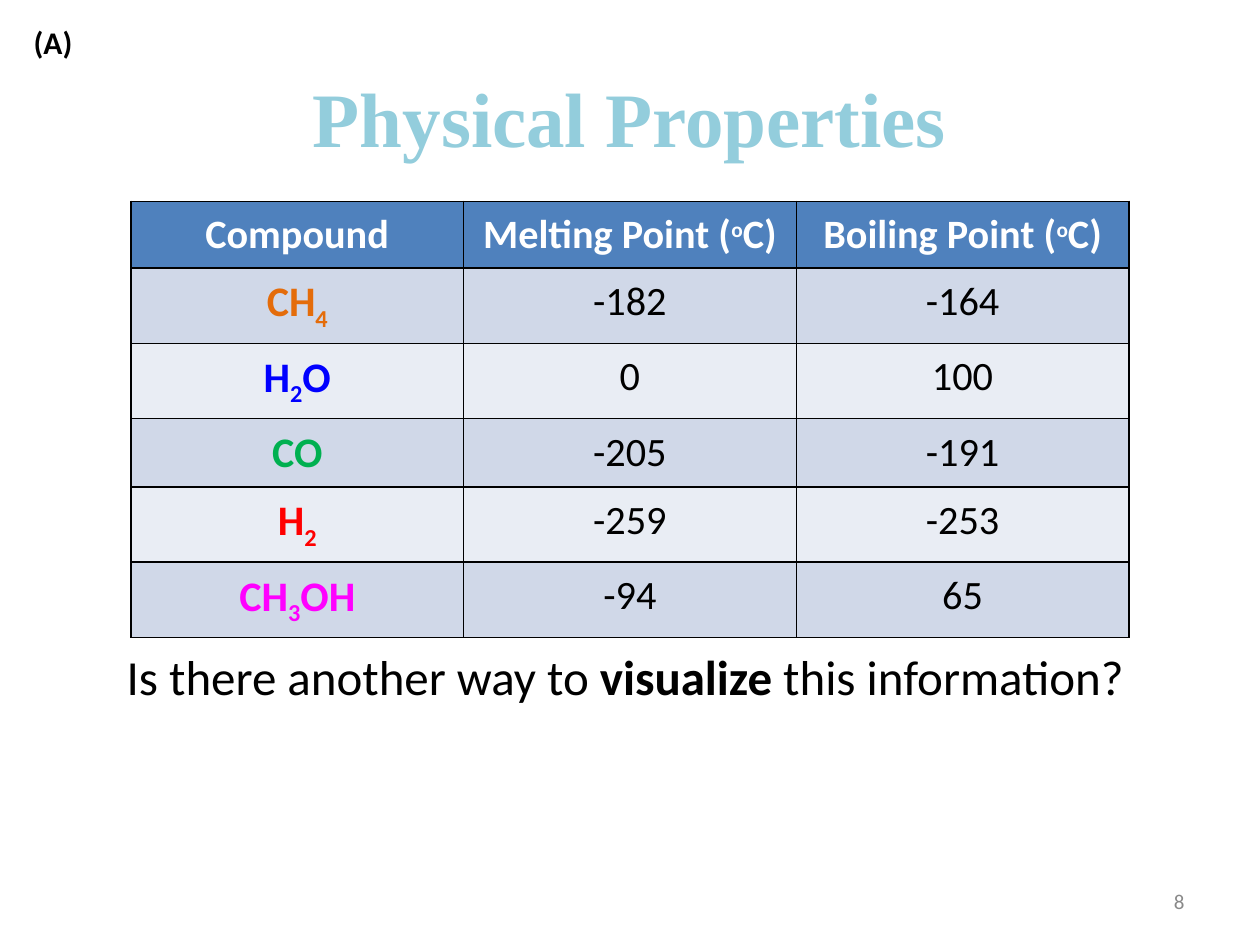
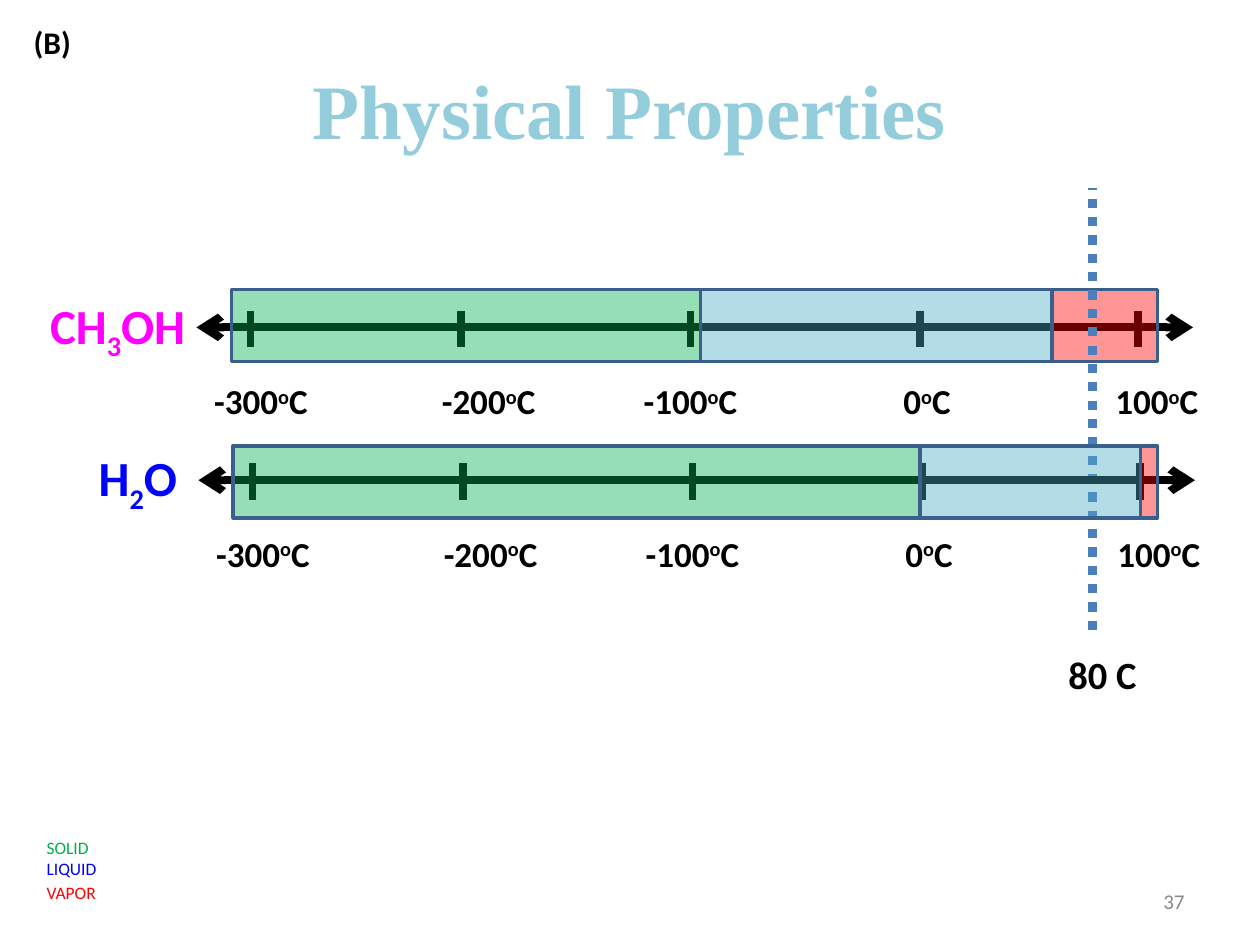
from pptx import Presentation
from pptx.dml.color import RGBColor
from pptx.enum.dml import MSO_LINE
from pptx.enum.shapes import MSO_CONNECTOR, MSO_SHAPE
from pptx.enum.text import MSO_ANCHOR, PP_ALIGN
from pptx.oxml.ns import qn
from pptx.util import Cm, Pt
from lxml.etree import SubElement

BLACK = RGBColor(0x00, 0x00, 0x00)
WHITE = RGBColor(0xFF, 0xFF, 0xFF)
GREY = RGBColor(0x89, 0x89, 0x89)
TITLE_BLUE = RGBColor(0x93, 0xCD, 0xDC)
HEADER_BLUE = RGBColor(0x4F, 0x81, 0xBD)
DARK_BAND = RGBColor(0xD0, 0xD8, 0xE8)
LIGHT_BAND = RGBColor(0xE9, 0xED, 0xF4)
ORANGE = RGBColor(0xE4, 0x6C, 0x0A)
BLUE = RGBColor(0x00, 0x00, 0xFF)
GREEN = RGBColor(0x00, 0xB0, 0x50)
RED = RGBColor(0xFF, 0x00, 0x00)
MAGENTA = RGBColor(0xFF, 0x00, 0xFF)
TEAL = RGBColor(0x4B, 0xAC, 0xC6)
BAR_EDGE = RGBColor(0x3A, 0x5F, 0x8C)
MARKER_BLUE = RGBColor(0x4B, 0x7E, 0xBC)

LEFT, CENTER, RIGHT = PP_ALIGN.LEFT, PP_ALIGN.CENTER, PP_ALIGN.RIGHT
TOP, MIDDLE = MSO_ANCHOR.TOP, MSO_ANCHOR.MIDDLE
BASELINES = {"^": "30000", "_": "-25000"}


def write(para, text, size, color, bold=False, align=LEFT, font="Calibri", raised_size=None):
    """Add text run by run; | parts runs, and a leading ^, _ or * raises, lowers or bolds one."""
    para.alignment = align
    for piece in text.split("|"):
        mark = piece[0] if piece[0] in "^_*" else ""
        span = para.add_run()
        span.text = piece[len(mark):]
        span.font.name = font
        span.font.size = Pt(raised_size if raised_size and mark == "^" else size)
        span.font.bold = bold or mark == "*"
        span.font.color.rgb = color
        if mark in BASELINES:
            span.font._element.set("baseline", BASELINES[mark])


def add_text(page, place, text, size, color, anchor=TOP, **style):
    box = page.shapes.add_textbox(*map(Cm, place))
    frame = box.text_frame
    frame.word_wrap = True
    frame.vertical_anchor = anchor
    write(frame.paragraphs[0], text, size, color, **style)
    return frame


deck = Presentation()
deck.slide_width, deck.slide_height = Cm(25.4), Cm(19.05)

# Title, panel letter and page number on both slides
pages = []
for letter, number, title_top in [("(A)", "8", 0.76), ("(B)", "37", 0.61)]:
    page = deck.slides.add_slide(deck.slide_layouts[6])
    add_text(page, (1.27, title_top, 22.86, 3.18), "Physical Properties", 44, TITLE_BLUE,
             MIDDLE, bold=True, align=CENTER, font="Times New Roman")
    add_text(page, (0.43, 0.33, 1.47, 1.02), letter, 18, BLACK, bold=True)
    add_text(page, (18.21, 17.65, 5.92, 1.02), number, 12, GREY, MIDDLE, align=RIGHT)
    pages.append(page)
table_page, scale_page = pages

# Table of melting and boiling points
HEADERS = ["Compound", "Melting Point (|^o|C)", "Boiling Point (|^o|C)"]
COMPOUNDS = [
    ("CH|_4", ORANGE, "-182", "-164"),
    ("H|_2|O", BLUE, "0", "100"),
    ("CO", GREEN, "-205", "-191"),
    ("H|_2", RED, "-259", "-253"),
    ("CH|_3|OH", MAGENTA, "-94", "65"),
]
rows = [[(header, 23, WHITE, True) for header in HEADERS]]
for formula, color, melting, boiling in COMPOUNDS:
    rows.append([(formula, 24, color, True), (melting, 23, BLACK, False),
                 (boiling, 23, BLACK, False)])

table = table_page.shapes.add_table(len(rows), 3, Cm(2.64), Cm(4.06), Cm(20.12), Cm(8.08)).table
for row_index, row in enumerate(rows):
    band = HEADER_BLUE if row_index == 0 else DARK_BAND if row_index % 2 else LIGHT_BAND
    for column_index, (text, size, color, bold) in enumerate(row):
        cell = table.cell(row_index, column_index)
        cell.margin_left = cell.margin_right = Cm(0.33)
        cell.margin_top = cell.margin_bottom = Cm(0.18)
        write(cell.text_frame.paragraphs[0], text, size, color, bold, CENTER, raised_size=21)
        properties = cell._tc.get_or_add_tcPr()
        for side in ("a:lnL", "a:lnR", "a:lnT", "a:lnB"):
            border = SubElement(properties, qn(side), w=str(Pt(1)))
            SubElement(SubElement(border, qn("a:solidFill")), qn("a:srgbClr"), val=str(BLACK))
        cell.fill.solid()
        cell.fill.fore_color.rgb = band

add_text(table_page, (1.17, 12.9, 23.09, 1.45),
         "Is there another way to |*visualize| this information? ", 28, BLACK, align=CENTER)

# Temperature scales: tick position and label position for each temperature
TICKS = [("-300", 5.05, 3.61), ("-200", 9.3, 8.2), ("-100", 13.92, 12.27),
         ("0", 18.54, 17.04), ("100", 22.94, 21.67)]
MARKER = (22.02, 12.7, 22.02, 3.78, MARKER_BLUE, 5.25, "dotted")
# name, colour, name corner, axis shift, axis height, bar top, bar edges, lines below the axis
SCALES = [
    ("CH|_3|OH", MAGENTA, (0.48, 5.84), 0, 6.6, 5.84, (4.67, 14.12, 21.21, 23.34), []),
    ("H|_2|O", BLUE, (0.89, 8.92), 0.04, 9.68, 8.99, (4.7, 18.55, 22.99, 23.34), [MARKER]),
]
for name, color, corner, shift, axis, bar_top, edges, lines_below in SCALES:
    lines = lines_below + [(3.96 + shift, axis, 24.05 + shift, axis, BLACK, 4.5, "arrows")]
    for _, tick, _ in TICKS:
        lines.append((tick + shift, axis - 0.34, tick + shift, axis + 0.39, BLACK, 4.5, "plain"))
    for *ends, line_color, width, kind in lines:
        connector = scale_page.shapes.add_connector(MSO_CONNECTOR.STRAIGHT, *map(Cm, ends))
        connector.line.color.rgb = line_color
        connector.line.width = Pt(width)
        properties = connector._element.spPr
        if kind == "dotted":
            connector.line.dash_style = MSO_LINE.ROUND_DOT
        if kind == "arrows":
            for end in ("a:headEnd", "a:tailEnd"):
                SubElement(properties.find(qn("a:ln")), qn(end), type="arrow")
        SubElement(properties, qn("a:effectLst"))

    for degrees, _, label_left in TICKS:
        add_text(scale_page, (label_left + shift, axis + 0.79, 3.3, 1.37), degrees + "|^o|C",
                 20, BLACK, MIDDLE, bold=True, align=CENTER)
    add_text(scale_page, (*corner, 3.78, 1.57), name, 28, color, MIDDLE, bold=True, align=CENTER)

    for start, end, fill in zip(edges, edges[1:], (GREEN, TEAL, RED)):
        bar = scale_page.shapes.add_shape(MSO_SHAPE.RECTANGLE, Cm(start), Cm(bar_top),
                                          Cm(end - start), Cm(1.45))
        bar.shadow.inherit = False
        bar.fill.solid()
        bar.fill.fore_color.rgb = fill
        bar.line.color.rgb = BAR_EDGE
        bar.line.width = Pt(2)
        tint = bar._element.spPr.find(qn("a:solidFill")).find(qn("a:srgbClr"))
        SubElement(tint, qn("a:alpha"), val="41000")

add_text(scale_page, (21.29, 13, 2.97, 1.19), "80 C", 22, BLACK, bold=True)

# Legend of the three states
legend = add_text(scale_page, (0.69, 16.74, 2.97, 1.63), "SOLID", 10, GREEN)
for state, color, gap in [("LIQUID", BLUE, 0), ("VAPOR", RED, 2)]:
    para = legend.add_paragraph()
    para.space_before = Pt(gap)
    write(para, state, 10, color)

deck.save("out.pptx")
